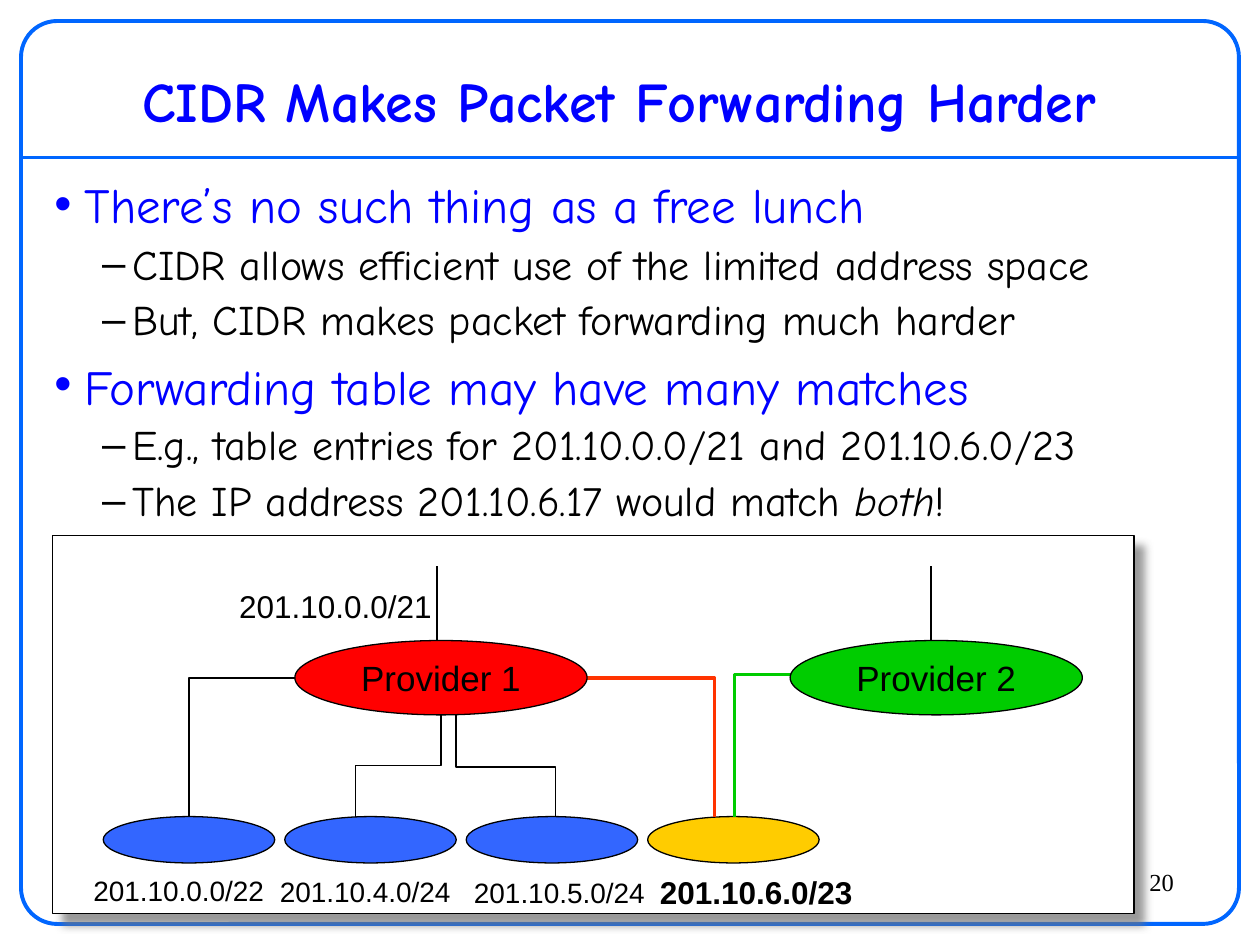
from lxml import etree
from pptx import Presentation
from pptx import util as u
from pptx.dml.color import RGBColor
from pptx.enum import shapes, text
from pptx.oxml.ns import qn

Pt = u.Pt
C = {"frame": "0066FF", "blue": "0000FF", "black": "000000", "white": "FFFFFF",
     "red": "FF0000", "green": "00CC00", "customer": "3366FF", "gold": "FFCC00",
     "orange": "FF3300", "shadow": "777777"}
CENTER, RIGHT = text.PP_ALIGN.CENTER, text.PP_ALIGN.RIGHT
SHAPE = shapes.MSO_SHAPE


def rgb(name):
    return RGBColor.from_string(C[name])


def sub(parent, tag, **attrs):
    return etree.SubElement(parent, qn(tag), {k: str(v) for k, v in attrs.items()})


def add_run(p, words, size=16, font="Arial", color="black", bold=False, italic=False):
    r = p.add_run()
    r.text = words
    f = r.font
    f.size, f.name, f.bold, f.italic = Pt(size), font, bold, italic
    f.color.rgb = rgb(color)


def add_text(s, box, words, align=None, **fmt):
    tf = s.shapes.add_textbox(*map(Pt, box)).text_frame
    tf.word_wrap = False
    p = tf.paragraphs[0]
    p.alignment = align
    add_run(p, words, **fmt)


def add_shape(s, kind, box, fill=None, line="black", width=0.75, label=None):
    sp = s.shapes.add_shape(kind, *map(Pt, box))
    sp.shadow.inherit = False
    if fill:
        sp.fill.solid()
        sp.fill.fore_color.rgb = rgb(fill)
    else:
        sp.fill.background()
    sp.line.color.rgb = rgb(line)
    sp.line.width = Pt(width)
    if label:
        tf = sp.text_frame
        tf.word_wrap = False
        tf.vertical_anchor = text.MSO_ANCHOR.MIDDLE
        tf.paragraphs[0].alignment = CENTER
        add_run(tf.paragraphs[0], label, size=20)
    return sp


def add_line(s, start, end, color="black", width=0.75, kind=shapes.MSO_CONNECTOR.STRAIGHT):
    c = s.shapes.add_connector(kind, *map(Pt, (*start, *end)))
    c.line.color.rgb = rgb(color)
    c.line.width = Pt(width)
    sub(c._element.spPr, "a:effectLst")
    return c


def add_elbow(s, start, end, bends, rot=0, flip=None, adj=None, **fmt):
    (x1, y1), (x2, y2) = start, end
    w, h = abs(x2 - x1), abs(y2 - y1)
    if rot in (90, 270):
        w, h = h, w
    left, top = (x1 + x2 - w) / 2, (y1 + y2 - h) / 2
    c = add_line(s, (left, top), (left + w, top + h),
                 kind=shapes.MSO_CONNECTOR.ELBOW, **fmt)
    xfrm = c._element.spPr.find(qn("a:xfrm"))
    xfrm.set("rot", str(rot * 60000))
    if flip:
        xfrm.set(flip, "1")
    geom = c._element.spPr.find(qn("a:prstGeom"))
    geom.set("prst", f"bentConnector{bends + 1}")
    if adj is not None:
        guides = geom.find(qn("a:avLst"))
        if guides is None:
            guides = sub(geom, "a:avLst")
        sub(guides, "a:gd", name="adj1", fmla=f"val {round(adj * 100000)}")


def build_frame(s, box):
    x, y, w, h = box
    add_line(s, (x, y + 78), (x + w, y + 78), "frame", 2.25)
    sp = add_shape(s, SHAPE.ROUNDED_RECTANGLE, box, line="frame", width=2.25)
    sp.adjustments[0] = 0.04
    add_text(s, (x + w - 102, y + h - 36, 72, 30), "20", RIGHT, size=14, font="Times New Roman")


def build_title(s, box, words):
    sp = s.shapes.title
    sp.left, sp.top, sp.width, sp.height = map(Pt, box)
    tf = sp.text_frame
    tf.vertical_anchor = text.MSO_ANCHOR.MIDDLE
    tf.paragraphs[0].alignment = CENTER
    add_run(tf.paragraphs[0], words, size=32, font="Comic Neue", color="blue", bold=True)


def build_bullets(s, box, items):
    tf = s.shapes.add_textbox(*map(Pt, box)).text_frame
    tf.word_wrap = True
    for i, (level, spacing, runs) in enumerate(items):
        p = tf.paragraphs[0] if i == 0 else tf.add_paragraph()
        p.level = level
        p.line_spacing = spacing
        if i:
            p.space_before = Pt((16, 3)[level])
        pPr = p._p.get_or_add_pPr()
        pPr.set("marL", str(Pt((17.25, 44.5)[level])))
        pPr.set("indent", str(-Pt(17.25)))
        sub(pPr, "a:buFont", typeface="Arial")
        sub(pPr, "a:buChar", char="•–"[level])
        for words, italic in runs:
            add_run(p, words, size=(28, 24)[level], font="Comic Neue",
                    color=("blue", "black")[level], italic=italic)


def build_network(s, box):
    left, top = box[:2]

    def at(x, y, *size):
        return (left + x, top + y, *size)

    panel = add_shape(s, SHAPE.RECTANGLE, box, "white")
    effects = panel._element.spPr.find(qn("a:effectLst"))
    shadow = sub(effects, "a:outerShdw", blurRad=Pt(5), dist=Pt(8.5), dir=45 * 60000,
                 algn="tl", rotWithShape=0)
    sub(sub(shadow, "a:srgbClr", val=C["shadow"]), "a:alpha", val=75000)

    add_text(s, at(99.6, 26, 124.6, 29), "201.10.0.0/21", size=18)
    for x, y, words in ((16, 189.4, "201.10.0.0/22"), (122.6, 190, "201.10.4.0/24"),
                        (233.5, 190.8, "201.10.5.0/24")):
        add_text(s, at(x, y, 112.3, 26.6), words, CENTER)
    add_text(s, at(340, 189.4, 124.6, 29), "201.10.6.0/23", size=18, bold=True)

    for i, fill in enumerate(("customer", "customer", "customer", "gold")):
        add_shape(s, SHAPE.OVAL, at(29 + 103.7 * i, 160.6, 98, 26.5), fill)

    add_elbow(s, at(138.5, 81.4), at(78, 160.6), 1, rot=180, flip="flipV")
    add_elbow(s, at(222, 102.2), at(173, 161), 2, rot=90, adj=0.5)
    add_elbow(s, at(305.5, 81.4), at(378.2, 160.6), 1, color="orange", width=2)
    add_elbow(s, at(230.6, 102.2), at(287.5, 160.6), 2, rot=270, flip="flipH", adj=0.515)
    add_elbow(s, at(421.5, 80.5), at(389.8, 160.6), 2, rot=90, adj=-0.014,
              color="green", width=2)

    for i, (x, uplink, fill) in enumerate(((138.5, 219.8, "red"), (421.5, 502, "green")), 1):
        add_line(s, at(uplink, 60), at(uplink, 17.3))
        add_shape(s, SHAPE.OVAL, at(x, 60, 167, 42.5), fill, label=f"Provider {i}")


def main():
    prs = Presentation()
    prs.slide_width, prs.slide_height = Pt(720), Pt(540)
    s = prs.slides.add_slide(prs.slide_layouts[5])
    build_frame(s, (12, 12, 696, 516))
    build_title(s, (24, 30, 660, 54), "CIDR Makes Packet Forwarding Harder")
    build_bullets(s, (24, 96, 678, 432), [
        (0, 1, [("There’s no such thing as a free lunch", False)]),
        (1, 1, [("CIDR allows efficient use of the limited address space", False)]),
        (1, 1, [("But, CIDR makes packet forwarding much harder", False)]),
        (0, 0.7, [("Forwarding table may have many matches", False)]),
        (1, 1, [("E.g., table entries for 201.10.0.0/21 and 201.10.6.0/23", False)]),
        (1, 1, [("The IP address 201.10.6.17 would match ", False), ("both", True), ("!", False)]),
    ])
    build_network(s, (30, 306, 618, 216))
    prs.save("out.pptx")


if __name__ == "__main__":
    main()
